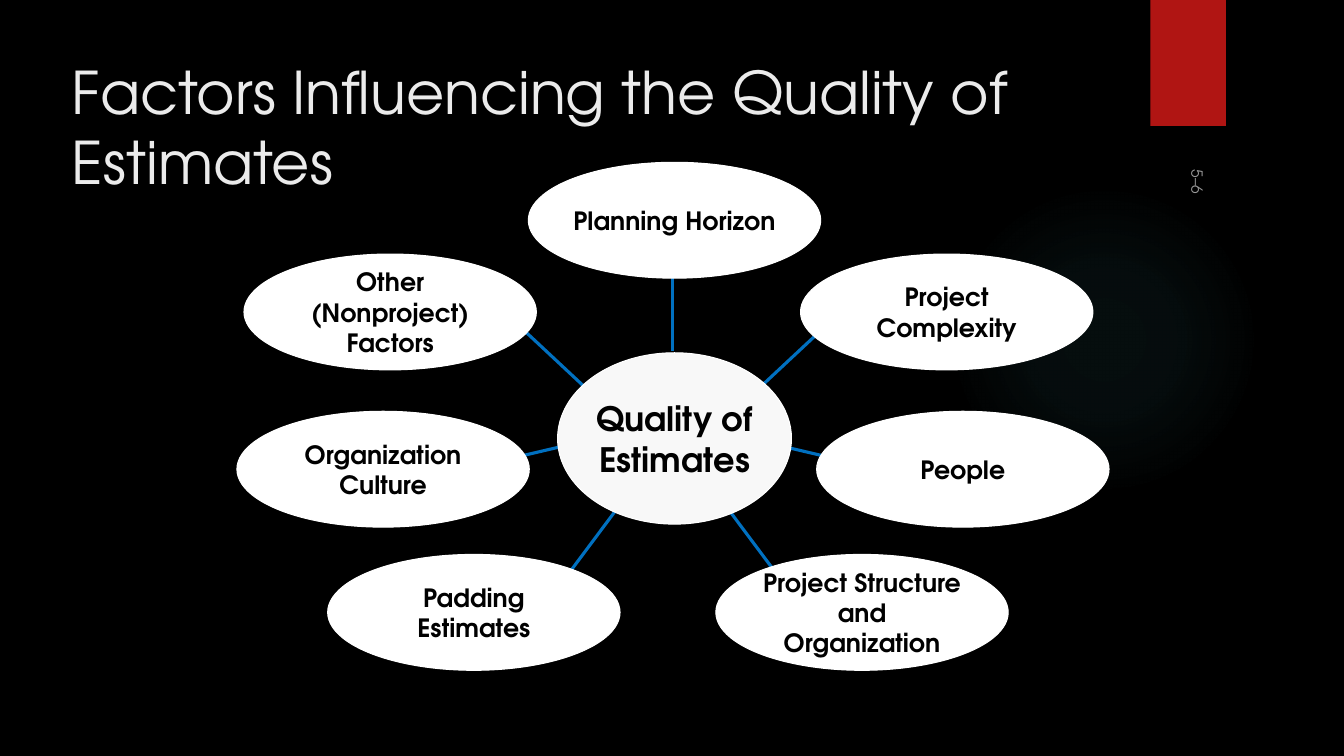
from lxml.etree import SubElement
from pptx import Presentation
from pptx.dml.color import RGBColor
from pptx.enum.shapes import MSO_CONNECTOR as Connector, MSO_SHAPE as Shape
from pptx.enum.text import MSO_ANCHOR as Anchor, MSO_AUTO_SIZE as AutoSize, PP_ALIGN as Align
from pptx.oxml import parse_xml
from pptx.oxml.ns import nsdecls, qn
from pptx.util import Inches, Pt

FONT = "TeX Gyre Adventor"
BLACK, WHITE, RED, BLUE = "000000", "FFFFFF", "B01513", "0070C0"
TITLE_COLOUR, HUB_FILL, NUMBER_COLOUR, GLOW = "EBEBEB", "F8F8F8", "999999", "50B9C1"
FACTOR_SIZE = (2.9, 1.15)
AXIS = 6.67
FACTORS = [
    ("Project\vComplexity", 7.94, 2.52),
    ("People", 8.1, 4.08),
    ("Project Structure and Organization", 7.1, 5.5),
    ("Padding\vEstimates", 3.25, 5.5),
    ("Organization\vCulture", 2.35, 4.08),
    ("Other (Nonproject)\vFactors", 2.42, 2.52),
    ("Planning Horizon", 5.24, 1.61),
]
SIDE_SPOKES = [
    (1.47, 3.28, 0.86, 3.85),
    (1.74, 4.58, 0.93, 4.39),
    (0.5, 4.98, 1.0, 5.65),
]


def colour(hex_code):
    """Return the colour for a hex string."""
    return RGBColor.from_string(hex_code)


def set_attributes(target, values):
    """Set every attribute in a dict of format values."""
    for name, value in values.items():
        setattr(target, name, value)


def write_text(frame, text, size, hex_code, align=Align.LEFT, bold=False, **frame_format):
    """Fill a text frame with one formatted paragraph."""
    frame.text = text
    set_attributes(frame, {"word_wrap": True, "auto_size": AutoSize.NONE, **frame_format})
    paragraph = frame.paragraphs[0]
    paragraph.alignment = align
    for run in paragraph.runs:
        set_attributes(run.font, {"name": FONT, "size": Pt(size), "bold": bold})
        run.font.color.rgb = colour(hex_code)


def add_block(slide, preset, box, fill, outline=None):
    """Add a preset shape with a plain fill and optional outline."""
    block = slide.shapes.add_shape(preset, *map(Inches, box))
    block.shadow.inherit = False
    block.fill.solid()
    block.fill.fore_color.rgb = colour(fill)
    if outline:
        block.line.color.rgb = colour(outline)
        block.line.width = Pt(0.75)
    else:
        block.line.fill.background()
    return block


def add_glow(slide):
    """Add the faint round glow behind the diagram."""
    glow = add_block(slide, Shape.OVAL, (9.41, 1.83, 3.08, 3.08), GLOW)
    stops = "".join(
        f'<a:gs pos="{position}000"><a:srgbClr val="{GLOW}"><a:alpha val="{alpha}000"/></a:srgbClr></a:gs>'
        for position, alpha in ((0, 7), (36, 6), (69, 0), (100, 0))
    )
    gradient = parse_xml(
        f'<a:gradFill {nsdecls("a")}><a:gsLst>{stops}</a:gsLst><a:path path="circle">'
        '<a:fillToRect l="50000" t="50000" r="50000" b="50000"/></a:path></a:gradFill>'
    )
    properties = glow.element.spPr
    properties.replace(properties.find(qn("a:solidFill")), gradient)


def add_title(slide, text):
    """Place and format the title placeholder."""
    title = slide.shapes.title
    places = zip(("left", "top", "width", "height"), map(Inches, (0.71, 0.5, 10.29, 1.53)))
    set_attributes(title, dict(places))
    write_text(title.text_frame, text, 42, TITLE_COLOUR, vertical_anchor=Anchor.TOP,
               margin_left=0, margin_right=0)


def add_page_number(slide, text):
    """Add the page number turned to read downwards."""
    number = slide.shapes.add_textbox(*map(Inches, (9.79, 3.53, 4.22, 0.33)))
    number.rotation = 90
    write_text(number.text_frame, text, 11, NUMBER_COLOUR, vertical_anchor=Anchor.BOTTOM)


def add_spoke(slide, *ends):
    """Join the hub to a factor with a blue line."""
    spoke = slide.shapes.add_connector(Connector.STRAIGHT, *map(Inches, ends))
    spoke.line.color.rgb = colour(BLUE)
    spoke.line.width = Pt(2.25)
    SubElement(spoke.element.spPr, qn("a:effectLst"))


def add_bubble(slide, text, box, size, fill):
    """Add an ellipse with a bold centred label."""
    bubble = add_block(slide, Shape.OVAL, box, fill, WHITE)
    margins = dict.fromkeys(("margin_left", "margin_top", "margin_right", "margin_bottom"), 0)
    write_text(bubble.text_frame, text, size, BLACK, Align.CENTER, True,
               vertical_anchor=Anchor.MIDDLE, **margins)


def main():
    """Build and save the slide."""
    deck = Presentation()
    set_attributes(deck, {"slide_width": Inches(13.33), "slide_height": Inches(7.5)})
    slide = deck.slides.add_slide(deck.slide_layouts[5])
    slide.background.fill.solid()
    slide.background.fill.fore_color.rgb = colour(BLACK)

    add_glow(slide)
    add_block(slide, Shape.RECTANGLE, (11.41, 0, 0.75, 1.25), RED)
    add_page_number(slide, "5–6")
    add_title(slide, "Factors Influencing the Quality of Estimates")

    add_spoke(slide, AXIS, 2.65, AXIS, 3.48)
    for start, start_y, end, end_y in SIDE_SPOKES:
        for side in (-1, 1):
            add_spoke(slide, AXIS + side * start, start_y, AXIS + side * end, end_y)
    add_bubble(slide, "Quality of Estimates", (5.53, 3.5, 2.32, 1.7), 24, HUB_FILL)
    for label, left, top in FACTORS:
        add_bubble(slide, label, (left, top, *FACTOR_SIZE), 18, WHITE)
    deck.save("out.pptx")


if __name__ == "__main__":
    main()
